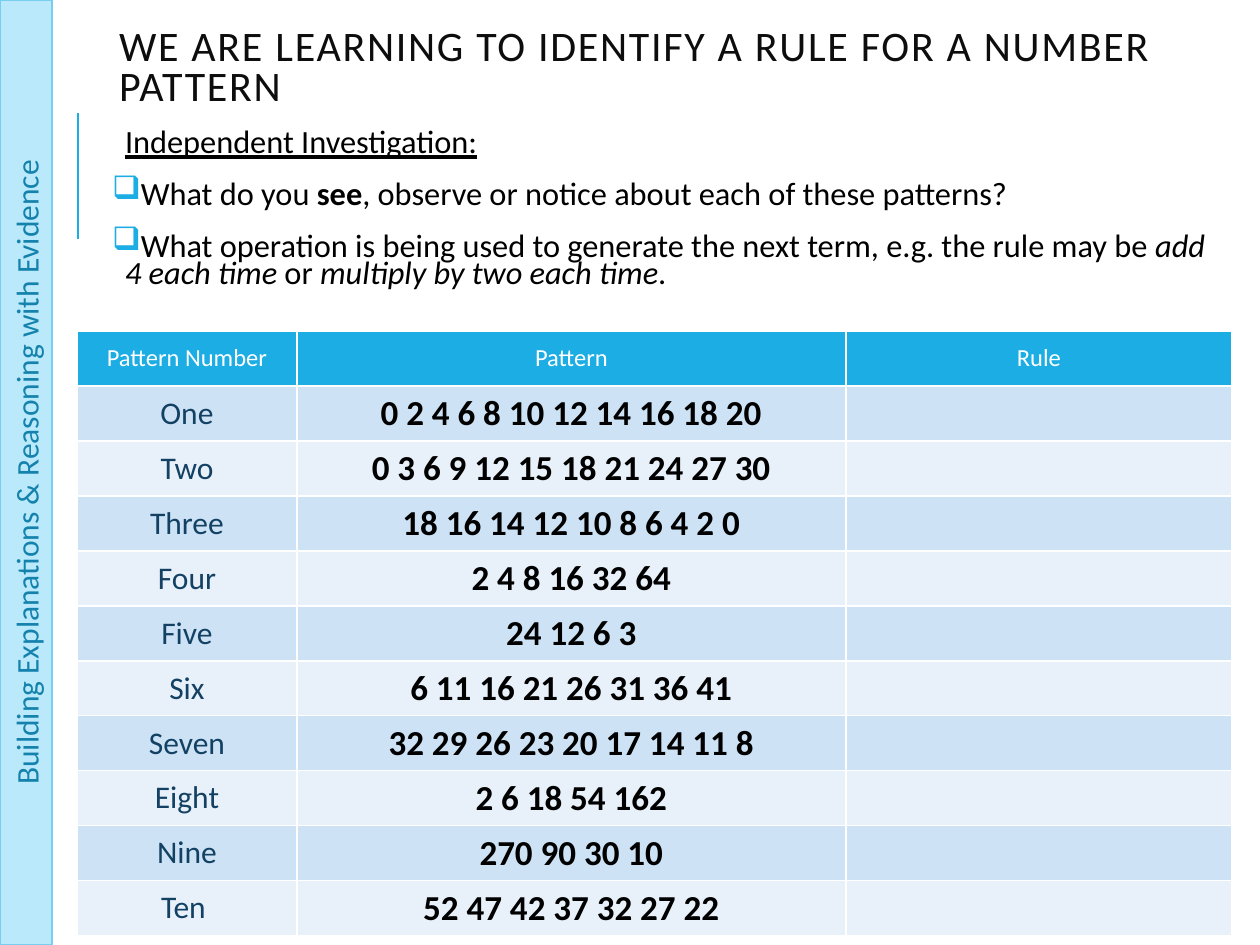
from lxml.etree import SubElement
from pptx import Presentation
from pptx.dml.color import RGBColor
from pptx.enum.shapes import MSO_CONNECTOR, MSO_SHAPE
from pptx.enum.text import MSO_ANCHOR, PP_ALIGN
from pptx.oxml.ns import qn
from pptx.util import Emu, Pt

PX = 914400 // 126
FONT = "Calibri"
COLORS = {
    "accent": "1CADE4",
    "banner": "BAE9FB",
    "banner_edge": "77CEEF",
    "banner_text": "1482AC",
    "title": "0D0D0D",
    "black": "000000",
    "white": "FFFFFF",
    "label": "134163",
    "odd_row": "CDE3F5",
    "even_row": "E8F1FA",
}
HEADERS = ["Pattern Number", "Pattern", "Rule"]
COLUMN_WIDTHS = [220, 549, 386]
ROW_HEIGHT = 55
PATTERNS = [
    ("One", "0 2 4 6 8 10 12 14 16 18 20"),
    ("Two", "0 3 6 9 12 15 18 21 24 27 30"),
    ("Three", "18 16 14 12 10 8 6 4 2 0"),
    ("Four", "2 4 8 16 32 64"),
    ("Five", "24 12 6 3"),
    ("Six", "6 11 16 21 26 31 36 41"),
    ("Seven", "32 29 26 23 20 17 14 11 8"),
    ("Eight", "2 6 18 54 162"),
    ("Nine", "270 90 30 10"),
    ("Ten ", "52 47 42 37 32 27 22"),
]
QUESTIONS = [
    [("Independent Investigation:", "underline")],
    [
        ("What do you ", None),
        ("see", "bold"),
        (", observe or notice about each of these patterns?", None),
    ],
    [
        ("What operation is being used to generate the next term, "
         "e.g. the rule may be ", None),
        ("add 4 each time", "italic"),
        (" or ", None),
        ("multiply by two each time", "italic"),
        (".", None),
    ],
]


def px(*lengths):
    return [Emu(length * PX) for length in lengths]


def color(name):
    return RGBColor.from_string(COLORS[name])


def set_font(paragraph, size, color_name, bold=False):
    font = paragraph.font
    font.name = FONT
    font.size = Pt(size)
    font.bold = bold
    font.color.rgb = color(color_name)


def add_text_box(page, place, insets):
    frame = page.shapes.add_textbox(*px(*place)).text_frame
    frame.word_wrap = True
    (frame.margin_left, frame.margin_top,
     frame.margin_right, frame.margin_bottom) = px(*insets)
    return frame


def add_accent_line(page):
    line = page.shapes.add_connector(MSO_CONNECTOR.STRAIGHT, *px(78, 239, 78, 113))
    line.line.color.rgb = color("accent")
    line.line.width = Pt(1.5)
    SubElement(line._element.spPr, qn("a:effectLst"))


def add_title(page):
    frame = add_text_box(page, (106, 40, 1105, 99), (13, 6, 13, 46))
    frame.vertical_anchor = MSO_ANCHOR.MIDDLE
    paragraph = frame.paragraphs[0]
    paragraph.line_spacing = 0.8
    set_font(paragraph, 24, "title")
    span = paragraph.add_run()
    span.text = "WE ARE LEARNING TO IDENTIFY A RULE FOR A NUMBER PATTERN"
    span.font._element.set("spc", "100")


def add_bullet(paragraph):
    properties = paragraph._p.get_or_add_pPr()
    properties.set("indent", str(-13 * PX))
    bullet_color = properties.makeelement(qn("a:buClr"), {})
    SubElement(bullet_color, qn("a:srgbClr"), val=COLORS["accent"])
    bullet = properties.makeelement(qn("a:buChar"), {"char": "❑"})
    for element in (bullet_color, bullet):
        properties.find(qn("a:defRPr")).addprevious(element)


def add_questions(page):
    frame = add_text_box(page, (106, 126, 1105, 215), (6, 6, 6, 6))
    for index, spans in enumerate(QUESTIONS):
        paragraph = frame.add_paragraph() if index else frame.paragraphs[0]
        paragraph.line_spacing = 0.7
        paragraph.space_before = Pt(12)
        paragraph.space_after = Pt(2)
        set_font(paragraph, 18.5, "black")
        paragraph._p.get_or_add_pPr().set("marL", str(13 * PX))
        if index:
            add_bullet(paragraph)
        for text, style in spans:
            span = paragraph.add_run()
            span.text = text
            if style:
                setattr(span.font, style, True)


def add_banner(page):
    banner = page.shapes.add_shape(MSO_SHAPE.RECTANGLE, *px(0, 0, 52, 945))
    banner.shadow.inherit = False
    banner.fill.solid()
    banner.fill.fore_color.rgb = color("banner")
    banner.line.color.rgb = color("banner_edge")
    banner.line.width = Pt(1.25)
    frame = banner.text_frame
    frame.vertical_anchor = MSO_ANCHOR.MIDDLE
    frame._txBody.bodyPr.set("vert", "vert270")
    paragraph = frame.paragraphs[0]
    paragraph.text = "Building Explanations & Reasoning with Evidence"
    paragraph.alignment = PP_ALIGN.CENTER
    set_font(paragraph, 18, "banner_text")


def fill_cell(cell, text, fill, size, color_name, bold=False):
    cell.fill.solid()
    cell.fill.fore_color.rgb = color(fill)
    cell.vertical_anchor = MSO_ANCHOR.MIDDLE
    paragraph = cell.text_frame.paragraphs[0]
    paragraph.alignment = PP_ALIGN.CENTER
    set_font(paragraph, size, color_name, bold)
    if text:
        span = paragraph.add_run()
        span.text = text
        span.font.bold = bold


def add_pattern_table(page):
    row_count = len(PATTERNS) + 1
    place = px(77, 331, sum(COLUMN_WIDTHS), ROW_HEIGHT * row_count)
    table = page.shapes.add_table(row_count, len(HEADERS), *place).table
    for column, width in zip(table.columns, px(*COLUMN_WIDTHS)):
        column.width = width
    for index, header in enumerate(HEADERS):
        fill_cell(table.cell(0, index), header, "accent", 14, "white")
    for row, (label, pattern) in enumerate(PATTERNS, 1):
        fill = "odd_row" if row % 2 else "even_row"
        fill_cell(table.cell(row, 0), label, fill, 18, "label")
        fill_cell(table.cell(row, 1), pattern, fill, 20, "black", bold=True)
        fill_cell(table.cell(row, 2), "", fill, 18, "black")


def main():
    deck = Presentation()
    deck.slide_width, deck.slide_height = px(1260, 945)
    page = deck.slides.add_slide(deck.slide_layouts[6])
    add_accent_line(page)
    add_questions(page)
    add_title(page)
    add_banner(page)
    add_pattern_table(page)
    deck.save("out.pptx")


if __name__ == "__main__":
    main()
